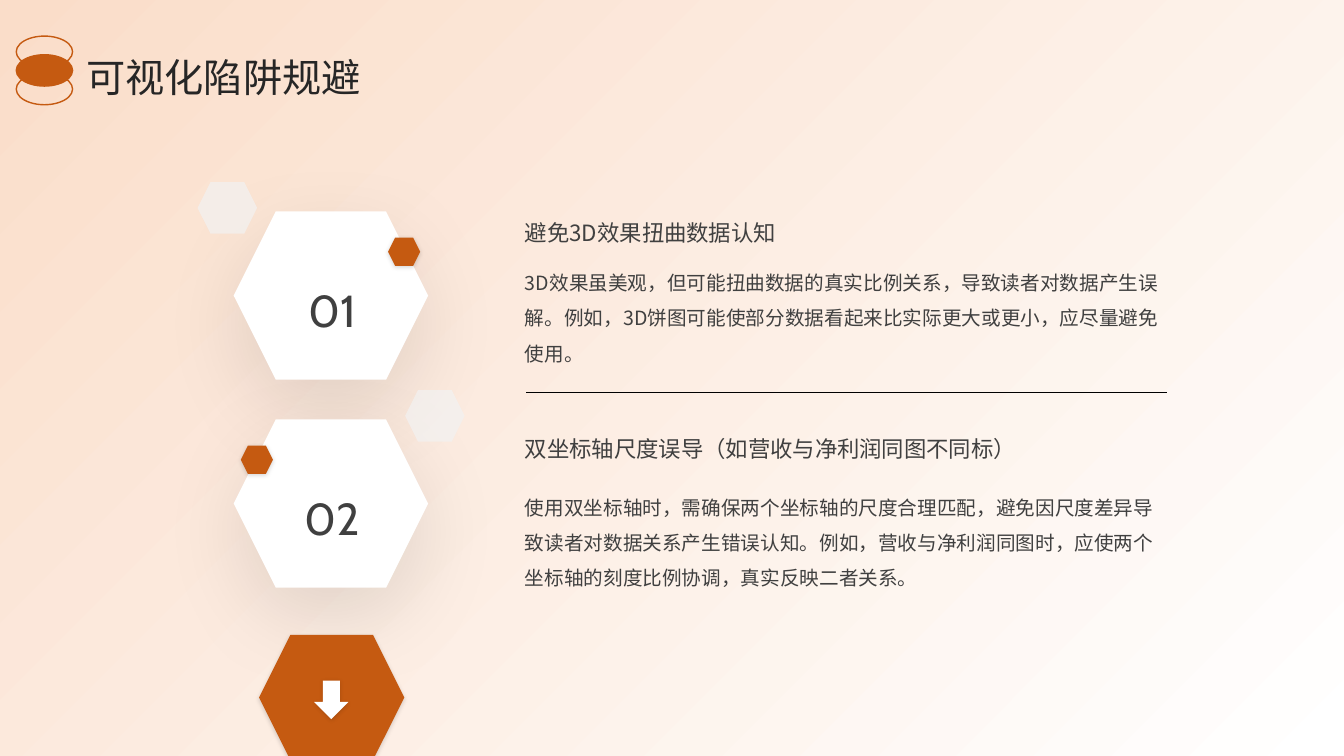
import pptx
import pptx.dml.color
import pptx.enum.shapes
import pptx.enum.text
import pptx.oxml
import pptx.oxml.ns
import pptx.util
from lxml import etree

Cm, Pt = pptx.util.Cm, pptx.util.Pt
SHAPE = pptx.enum.shapes.MSO_SHAPE
ALIGN = pptx.enum.text.PP_ALIGN
ANCHOR = pptx.enum.text.MSO_ANCHOR
qn = pptx.oxml.ns.qn

COLORS = {
    "white": "FFFFFF", "peach": "FADDC9", "orange": "C55A11", "pale": "F2F2F2",
    "text": "404040", "title": "262626", "black": "000000",
}
CHINESE, LATIN = "Noto Sans CJK SC", "Cabin"
# Shadows: opacity in percent, blur and distance in points
SOFT, TIGHT = (10, 60, 20), (15, 3, 1)


def rgb(name):
    return pptx.dml.color.RGBColor.from_string(COLORS[name])


class SlideBuilder:
    """Holds the text styles and the current slide."""

    styles = {
        "title": {"size": Pt(28), "name": CHINESE, "color": "title", "spacing": 1.1},
        "heading": {"size": Pt(16), "name": CHINESE, "color": "text", "spacing": 1.5},
        "body": {"size": Pt(14), "name": CHINESE, "color": "text", "spacing": 1.5},
        "number": {"size": Pt(32), "name": LATIN, "color": "text", "spacing": 1.5},
    }

    def __init__(self, presentation):
        self.slide = presentation.slides.add_slide(presentation.slide_layouts[6])

    def shape(self, kind, left, top, width, height, fill=None, line=None,
              shadow=None, opacity=None, parent=None):
        shapes = (parent or self.slide).shapes
        shape = shapes.add_shape(kind, Cm(left), Cm(top), Cm(width), Cm(height))
        shape.shadow.inherit = False
        if fill:
            shape.fill.solid()
            shape.fill.fore_color.rgb = rgb(fill)
        else:
            shape.fill.background()
        if line:
            shape.line.color.rgb = rgb(line)
            shape.line.width = Pt(1)
        else:
            shape.line.fill.background()
        if opacity:
            color = shape.fill._xPr.find(".//" + qn("a:srgbClr"))
            etree.SubElement(color, qn("a:alpha"), val=str(opacity * 1000))
        if shadow:
            self.add_shadow(shape, *shadow)
        return shape

    def add_shadow(self, shape, opacity, blur, distance):
        effects = shape._element.spPr.find(qn("a:effectLst"))
        outer = etree.SubElement(
            effects, qn("a:outerShdw"), blurRad=str(Pt(blur)), dist=str(Pt(distance)),
            dir="5400000", algn="t", rotWithShape="0")
        color = etree.SubElement(outer, qn("a:srgbClr"), val=COLORS["black"])
        etree.SubElement(color, qn("a:alpha"), val=str(opacity * 1000))

    def gradient(self, width, height, start, end, angle):
        shape = self.shape(SHAPE.RECTANGLE, 0, 0, width, height)
        shape.fill.gradient()
        shape.fill.gradient_angle = angle
        for stop, name in zip(shape.fill.gradient_stops, (start, end)):
            stop.color.rgb = rgb(name)

    def line(self, left, right, y):
        line = self.slide.shapes.add_connector(
            pptx.enum.shapes.MSO_CONNECTOR.STRAIGHT, Cm(left), Cm(y), Cm(right), Cm(y))
        line.line.color.rgb = rgb("black")
        line.line.width = Pt(0.5)
        etree.SubElement(line._element.spPr, qn("a:effectLst"))

    def text(self, text, style, left, top, width, height,
             anchor=ANCHOR.MIDDLE, align=ALIGN.LEFT):
        box = self.slide.shapes.add_textbox(Cm(left), Cm(top), Cm(width), Cm(height))
        frame_format = {"word_wrap": True, "vertical_anchor": anchor, "margin_left": 0,
                        "margin_top": 0, "margin_right": 0, "margin_bottom": 0}
        for name, value in frame_format.items():
            setattr(box.text_frame, name, value)
        look = self.styles[style]
        paragraph = box.text_frame.paragraphs[0]
        paragraph.alignment = align
        paragraph.line_spacing = look["spacing"]
        run = paragraph.add_run()
        run.text = text
        for name in ("size", "name"):
            setattr(run.font, name, look[name])
        run.font.color.rgb = rgb(look["color"])
        etree.SubElement(run._r.get_or_add_rPr(), qn("a:ea"), typeface=look["name"])

    def badge(self, top, accent_left, ghost_left):
        self.shape(SHAPE.HEXAGON, 5.89, top, 4.9, 4.24, "white", shadow=SOFT)
        self.shape(SHAPE.HEXAGON, accent_left, top + 0.66, 0.81, 0.71, "orange",
                   shadow=TIGHT)
        self.shape(SHAPE.HEXAGON, ghost_left, top - 0.74, 1.5, 1.3, "pale", opacity=70)

    def emblem(self, left, top, step):
        group = self.slide.shapes.add_group_shape()
        for index, fill in ((2, None), (1, "orange"), (0, None)):
            self.shape(SHAPE.OVAL, left, top + index * step, 1.42, 0.79, fill,
                       line="orange", parent=group)


def main():
    presentation = pptx.Presentation()
    presentation.slide_width, presentation.slide_height = Cm(33.87), Cm(19.05)
    builder = SlideBuilder(presentation)

    # Background
    builder.gradient(33.87, 19.05, "white", "peach", 135)

    # Hexagon column: top, accent left, ghost left
    badges = [(5.33, 9.78, 4.98), (10.57, 6.07, 10.21)]
    for badge in badges:
        builder.badge(*badge)
    builder.line(13.26, 29.41, 9.88)
    builder.shape(SHAPE.HEXAGON, 6.53, 16, 3.66, 3.15, "orange", shadow=TIGHT)
    builder.shape(SHAPE.DOWN_ARROW, 7.92, 17.15, 0.86, 0.97, "white", shadow=TIGHT)

    # Pitfalls: heading top, heading, body top, body
    pitfalls = [
        (5.05, "避免3D效果扭曲数据认知", 6.53,
         "3D效果虽美观，但可能扭曲数据的真实比例关系，导致读者对数据产生误解。"
         "例如，3D饼图可能使部分数据看起来比实际更大或更小，应尽量避免使用。"),
        (10.49, "双坐标轴尺度误导（如营收与净利润同图不同标）", 12.19,
         "使用双坐标轴时，需确保两个坐标轴的尺度合理匹配，避免因尺度差异导致读者对数据关系产生错误认知。"
         "例如，营收与净利润同图时，应使两个坐标轴的刻度比例协调，真实反映二者关系。"),
    ]
    for number, (badge, pitfall) in enumerate(zip(badges, pitfalls), 1):
        heading_top, heading, body_top, body = pitfall
        builder.text(body, "body", 13.23, body_top, 16.18, 2.95, anchor=ANCHOR.TOP)
        builder.text(heading, "heading", 13.23, heading_top, 16.18, 1.3)
        builder.text(f"{number:02d}", "number", 6.58, badge[0] + 0.5, 3.61, 3.25,
                     align=ALIGN.CENTER)

    # Title with emblem
    builder.text("可视化陷阱规避", "title", 2.18, 1.24, 29.64, 1.3)
    builder.emblem(0.41, 0.91, 0.47)

    presentation.save("out.pptx")


if __name__ == "__main__":
    main()
